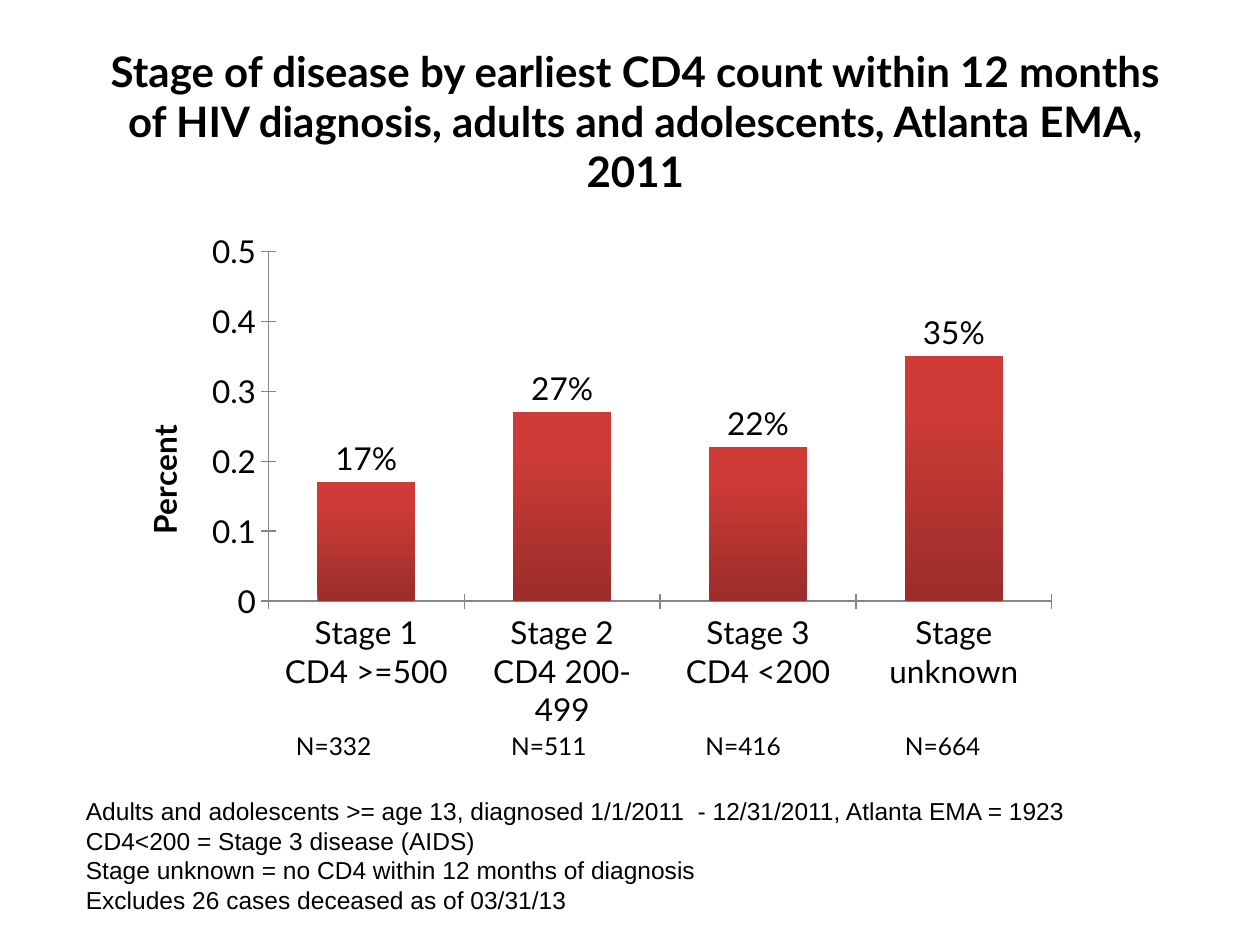
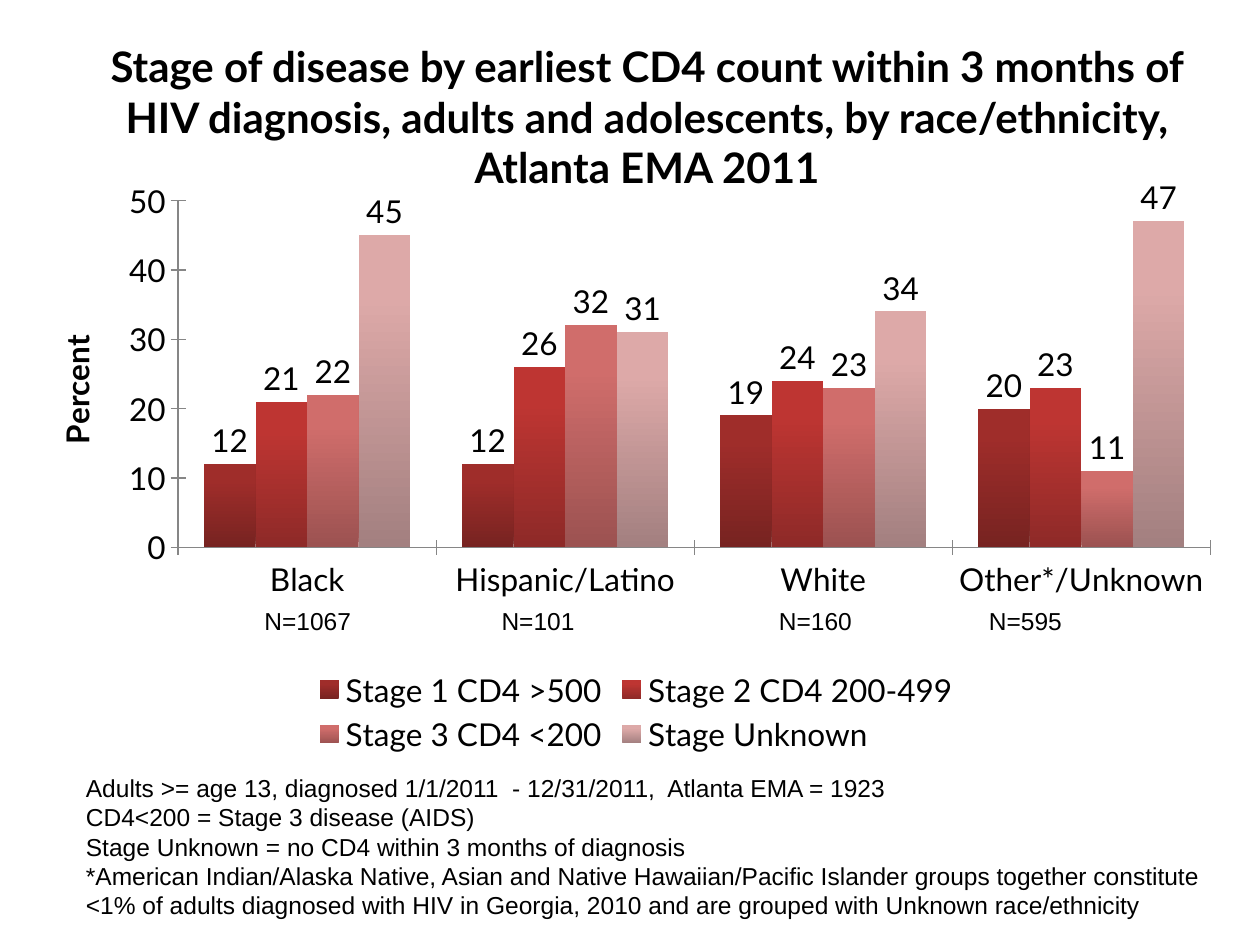
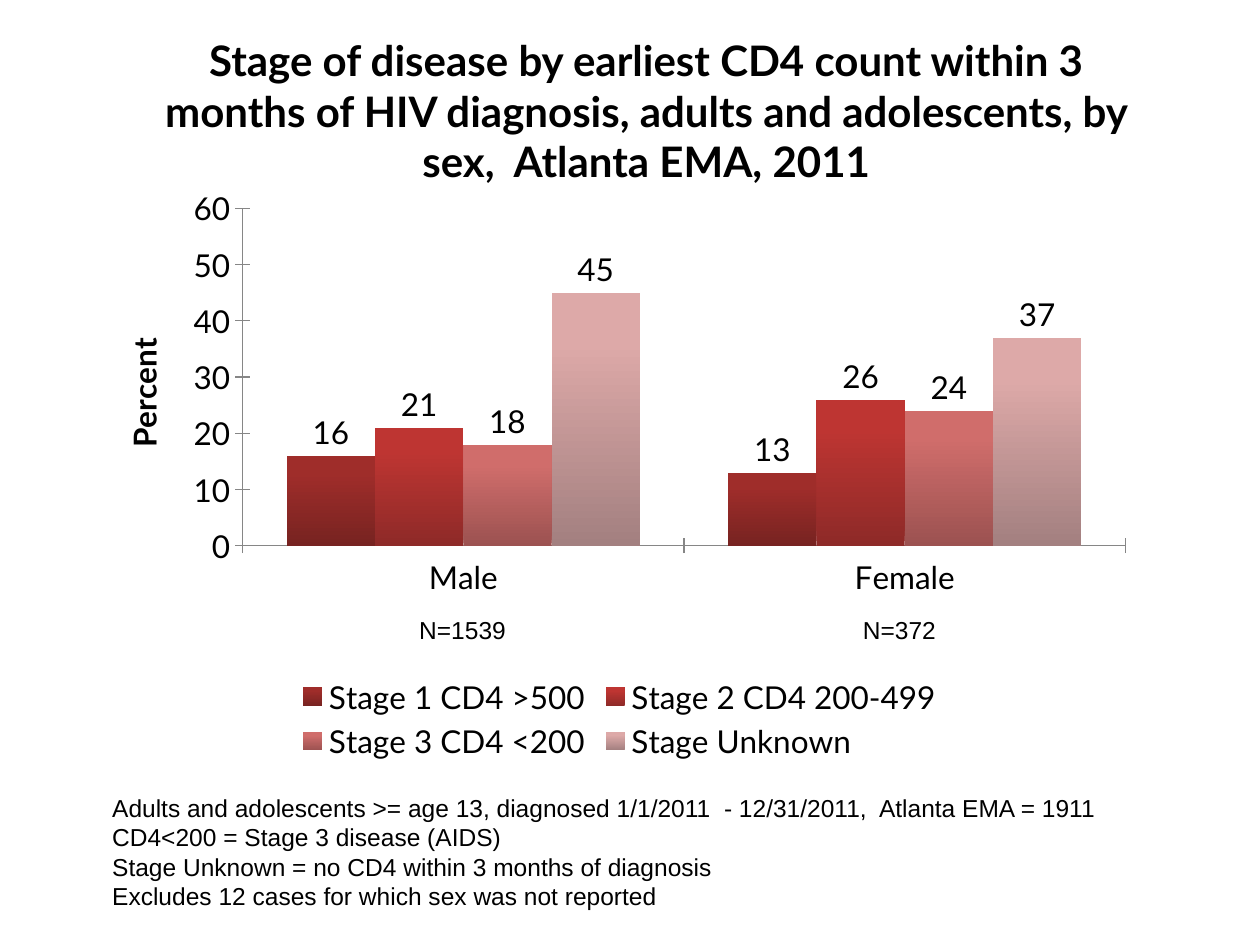
from pptx import Presentation
from pptx.chart.data import CategoryChartData
from pptx.dml.color import RGBColor
from pptx.enum.chart import XL_CHART_TYPE, XL_LABEL_POSITION, XL_LEGEND_POSITION, XL_TICK_MARK
from pptx.enum.shapes import MSO_SHAPE
from pptx.enum.text import MSO_ANCHOR, PP_ALIGN
from pptx.oxml import parse_xml
from pptx.oxml.ns import nsdecls
from pptx.util import Pt

COLORS = {"text": "000000", "paper": "FFFFFF", "axis": "868686"}

# Bar gradients, bottom colour then top colour
ALL_CASES = ("9B2D2A", "CE3B37")
STAGE_GRADIENTS = [
    ("772321", "9F2D2A"),
    ("8E2A28", "BE3532"),
    ("9C5251", "D06D6B"),
    ("A38080", "DDA9A8"),
]
STAGES = ["Stage 1 CD4 >500", "Stage 2 CD4 200-499", "Stage 3 CD4 <200", "Stage Unknown"]

# Shared type styles
TITLE_FONT = {"name": "Lato", "size": Pt(24), "bold": True}
CHART_FONT = {"name": "Lato", "size": Pt(18), "bold": False}
AXIS_TITLE_FONT = {**CHART_FONT, "bold": True}
COUNT_FONT = {"name": "Lato", "size": Pt(14)}
NOTE_FONT = {"name": "Arial", "size": Pt(14)}

AIDS_NOTE = "CD4<200 = Stage 3 disease (AIDS)"
THREE_MONTH_NOTE = "Stage Unknown = no CD4 within 3 months of diagnosis"


def color(name):
    return RGBColor.from_string(COLORS.get(name, name))


def set_values(target, values):
    for key, value in values.items():
        setattr(target, key, value)


def style_font(font, values):
    set_values(font, values)
    font.color.rgb = color("text")


def write_lines(frame, lines, font, align=PP_ALIGN.LEFT, anchor=MSO_ANCHOR.TOP):
    set_values(frame, {"word_wrap": True, "vertical_anchor": anchor})
    for index, line in enumerate(lines):
        paragraph = frame.paragraphs[0] if index == 0 else frame.add_paragraph()
        paragraph.text = line
        paragraph.alignment = align
        style_font(paragraph.font, font)


def add_title(slide, box, text):
    title = slide.shapes.add_textbox(*map(Pt, box))
    write_lines(title.text_frame, [text], TITLE_FONT, PP_ALIGN.CENTER, MSO_ANCHOR.MIDDLE)


def add_footnotes(slide, box, lines):
    panel = slide.shapes.add_shape(MSO_SHAPE.RECTANGLE, *map(Pt, box))
    panel.shadow.inherit = False
    panel.fill.solid()
    panel.fill.fore_color.rgb = color("paper")
    panel.line.fill.background()
    write_lines(panel.text_frame, lines, NOTE_FONT)


def add_counts(slide, lefts, top, size, counts, font=NOTE_FONT):
    for left, count in zip(lefts, counts):
        box = slide.shapes.add_textbox(Pt(left), Pt(top), *map(Pt, size))
        write_lines(box.text_frame, [f"N={count}"], font)


def set_plot_area(chart, x, y, w, h):
    """Fix the inner plot area as fractions of the chart."""
    plot_area = chart.plots[0]._element.getparent()
    for layout in plot_area.findall("{*}layout"):
        plot_area.remove(layout)
    fractions = "".join(f'<c:{key} val="{value}"/>' for key, value in zip("xywh", (x, y, w, h)))
    plot_area.insert(0, parse_xml(
        f'<c:layout {nsdecls("c")}><c:manualLayout><c:layoutTarget val="inner"/>'
        f'<c:xMode val="edge"/><c:yMode val="edge"/>{fractions}</c:manualLayout></c:layout>'))


def style_axes(chart, maximum, step):
    for axis in (chart.category_axis, chart.value_axis):
        set_values(axis, {"has_major_gridlines": False, "major_tick_mark": XL_TICK_MARK.CROSS})
        axis.format.line.color.rgb = color("axis")
        axis.format.line.width = Pt(0.75)
    percent = chart.value_axis
    set_values(percent, {"minimum_scale": 0, "maximum_scale": maximum, "major_unit": step})
    set_values(percent.tick_labels, {"number_format": "General", "number_format_is_linked": False})
    heading = percent.axis_title.text_frame
    heading.text = "Percent"
    style_font(heading.paragraphs[0].runs[0].font, AXIS_TITLE_FONT)


def style_bars(series, gradient, number_format):
    fill = series.format.fill
    fill.gradient()
    fill.gradient_angle = 90
    for stop, position, shade in zip(fill.gradient_stops, (0, 0.8), gradient):
        stop.position = position
        stop.color.rgb = color(shade)
    series.invert_if_negative = False
    labels = series.data_labels
    set_values(labels, {
        "show_value": True,
        "position": XL_LABEL_POSITION.OUTSIDE_END,
        "number_format": number_format,
        "number_format_is_linked": False,
    })
    style_font(labels.font, CHART_FONT)


def add_percent_chart(slide, box, plot_area, categories, rows, gradients,
                      maximum, step, number_format="General"):
    data = CategoryChartData()
    data.categories = categories
    for name, values in rows:
        data.add_series(name, values)
    chart = slide.shapes.add_chart(XL_CHART_TYPE.COLUMN_CLUSTERED, *map(Pt, box), data).chart
    set_values(chart, {"has_title": False, "has_legend": len(rows) > 1})
    style_font(chart.font, CHART_FONT)
    if chart.has_legend:
        set_values(chart.legend, {"position": XL_LEGEND_POSITION.BOTTOM, "include_in_layout": False})
        style_font(chart.legend.font, CHART_FONT)
    set_values(chart.plots[0], {"gap_width": 100, "overlap": 0, "vary_by_categories": False})
    for series, gradient in zip(chart.plots[0].series, gradients):
        style_bars(series, gradient, number_format)
    style_axes(chart, maximum, step)
    set_plot_area(chart, *plot_area)


def build_overall(slide):
    add_title(slide, (48, 30, 630, 78),
              "Stage of disease by earliest CD4 count within 12 months of HIV diagnosis, "
              "adults and adolescents, Atlanta EMA, 2011")
    add_percent_chart(
        slide, (66, 126, 546, 294), (0.16, 0.06, 0.82, 0.68),
        ["Stage 1\nCD4 >=500", "Stage 2\nCD4 200-499", "Stage 3\nCD4 <200", "Stage unknown"],
        [("Series 1", (0.17, 0.27, 0.22, 0.35))], [ALL_CASES], 0.5, 0.1, "0%")
    add_footnotes(slide, (42, 451.5, 678, 75), [
        "Adults and adolescents >= age 13, diagnosed 1/1/2011  - 12/31/2011, Atlanta EMA = 1923",
        AIDS_NOTE,
        "Stage unknown = no CD4 within 12 months of diagnosis",
        "Excludes 26 cases deceased as of 03/31/13",
    ])
    add_counts(slide, (162, 285, 396, 510), 414, (78, 18), (332, 511, 416, 664), COUNT_FONT)


def build_by_race(slide):
    add_title(slide, (36, 21.5, 667.5, 90),
              "Stage of disease by earliest CD4 count within 3 months of HIV diagnosis, "
              "adults and adolescents, by race/ethnicity, Atlanta EMA 2011")
    percents = [(12, 12, 19, 20), (21, 26, 24, 23), (22, 32, 23, 11), (45, 31, 34, 47)]
    add_percent_chart(
        slide, (24.5, 102, 678, 332), (0.114, 0.036, 0.87, 0.598),
        ["Black", "Hispanic/Latino", "White", "Other*/Unknown"],
        list(zip(STAGES, percents)), STAGE_GRADIENTS, 50, 10)
    add_footnotes(slide, (42, 438, 678, 92), [
        "Adults >= age 13, diagnosed 1/1/2011  - 12/31/2011,  Atlanta EMA = 1923",
        AIDS_NOTE,
        THREE_MONTH_NOTE,
        "*American Indian/Alaska Native, Asian and Native Hawaiian/Pacific Islander groups "
        "together constitute <1% of adults diagnosed with HIV in Georgia, 2010 and are "
        "grouped with Unknown race/ethnicity",
    ])
    add_counts(slide, (144, 279.5, 438, 558), 342.5, (84, 24.5), (1067, 101, 160, 595))


def build_by_sex(slide):
    add_title(slide, (72, 18, 594.5, 90),
              "Stage of disease by earliest CD4 count within 3 months of HIV diagnosis, "
              "adults and adolescents, by sex,  Atlanta EMA, 2011")
    percents = [(16, 13), (21, 26), (18, 24), (45, 37)]
    add_percent_chart(
        slide, (54, 102, 600, 336), (0.141, 0.051, 0.841, 0.574),
        ["Male", "Female"], list(zip(STAGES, percents)), STAGE_GRADIENTS, 60, 10)
    add_footnotes(slide, (57, 449.5, 663, 75), [
        "Adults and adolescents >= age 13, diagnosed 1/1/2011  - 12/31/2011,  Atlanta EMA = 1911",
        AIDS_NOTE,
        THREE_MONTH_NOTE,
        "Excludes 12 cases for which sex was not reported",
    ])
    add_counts(slide, (232.5, 486), 348, (72, 24.5), (1539, 372))


def main():
    deck = Presentation()
    set_values(deck, {"slide_width": Pt(720), "slide_height": Pt(540)})
    for build in (build_overall, build_by_race, build_by_sex):
        build(deck.slides.add_slide(deck.slide_layouts[6]))
    deck.save("out.pptx")


if __name__ == "__main__":
    main()
